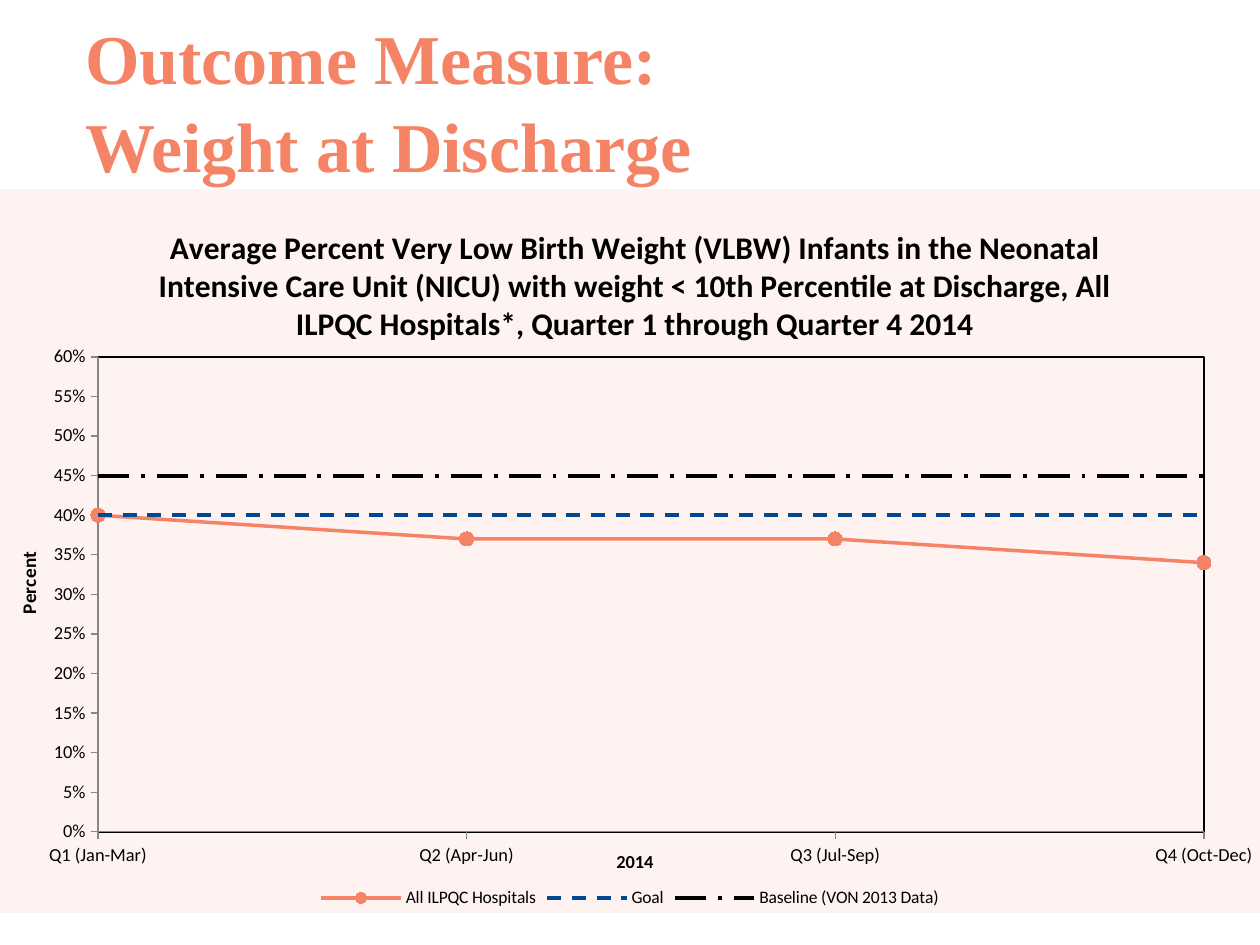
from dataclasses import dataclass

from lxml.etree import SubElement
from pptx import Presentation
from pptx.chart.data import CategoryChartData
from pptx.dml.color import RGBColor
from pptx.enum.chart import XL_CHART_TYPE, XL_LEGEND_POSITION, XL_MARKER_STYLE, XL_TICK_MARK
from pptx.enum.dml import MSO_LINE
from pptx.enum.text import MSO_ANCHOR
from pptx.oxml import parse_xml
from pptx.oxml.ns import nsdecls, qn
from pptx.util import Emu, Pt

EMU_PER_PX = 914400 / 126


@dataclass(frozen=True)
class Theme:
    coral: str = "F58466"
    navy: str = "004990"
    black: str = "000000"
    axis_gray: str = "868686"
    blush: str = "FEF3F0"
    heading_font: str = "Times New Roman"
    chart_font: str = "Calibri"
    heading_size: float = 40
    chart_title_size: float = 18
    percent_size: float = 11
    tick_size: float = 10.5
    legend_size: float = 10


@dataclass(frozen=True)
class Box:
    left: int
    top: int
    width: int
    height: int


@dataclass(frozen=True)
class Measure:
    name: str
    rates: tuple[float, ...]
    color: str
    weight: float
    dash: MSO_LINE = MSO_LINE.SOLID
    marker_size: int = 0


THEME = Theme()
SLIDE = Box(0, 0, 1260, 945)
HEADING = Box(73, 38, 861, 120)
CHART = Box(0, 189, 1260, 724)
PLOT = Box(98, 357, 1106, 475)
QUARTERS = ("Q1 (Jan-Mar)", "Q2 (Apr-Jun)", "Q3 (Jul-Sep)", "Q4 (Oct-Dec)")
MEASURES = (
    Measure("All ILPQC Hospitals", (0.40, 0.37, 0.37, 0.34), THEME.coral, 2, marker_size=8),
    Measure("Goal", (0.40,) * 4, THEME.navy, 2, MSO_LINE.DASH),
    Measure("Baseline (VON 2013 Data)", (0.45,) * 4, THEME.black, 2.25, MSO_LINE.LONG_DASH_DOT),
)
CHART_TITLE = (
    "Average Percent Very Low Birth Weight (VLBW) Infants in the Neonatal "
    "Intensive Care Unit (NICU) with weight < 10th Percentile at Discharge, "
    "All ILPQC Hospitals*, Quarter 1 through Quarter 4 2014"
)


def px(length: int) -> Emu:
    return Emu(round(length * EMU_PER_PX))


def rgb(color: str) -> RGBColor:
    return RGBColor.from_string(color)


def style_font(font, size: float, color: str = THEME.black,
               name: str = THEME.chart_font, bold: bool = False) -> None:
    font.size, font.name, font.bold = Pt(size), name, bold
    font.color.rgb = rgb(color)


def write_text(frame, text: str, *, spacing: float | None = None, **style) -> None:
    paragraph = frame.paragraphs[0]
    paragraph.text = text
    paragraph.line_spacing = spacing
    for run in paragraph.runs:
        style_font(run.font, **style)


def style_line(line, color: str, weight: float, dash: MSO_LINE = MSO_LINE.SOLID) -> None:
    line.color.rgb = rgb(color)
    line.width = Pt(weight)
    line.dash_style = dash


def manual_layout(left: int, top: int, width: int = 0, height: int = 0):
    layout = parse_xml(f"<c:layout {nsdecls('c')}/>")
    manual = SubElement(layout, qn("c:manualLayout"))
    entries = [("xMode", "edge"), ("yMode", "edge"),
               ("x", (left - CHART.left) / CHART.width),
               ("y", (top - CHART.top) / CHART.height)]
    if width:
        entries.insert(0, ("layoutTarget", "inner"))
        entries += [("w", width / CHART.width), ("h", height / CHART.height)]
    for tag, setting in entries:
        SubElement(manual, qn(f"c:{tag}")).set("val", str(setting))
    return layout


def place_title(title_element, left: int, top: int) -> None:
    for layout in title_element.findall(qn("c:layout")):
        title_element.remove(layout)
    title_element.find(qn("c:tx")).addnext(manual_layout(left, top))


def add_heading(slide) -> None:
    heading = slide.shapes.add_textbox(*map(px, (HEADING.left, HEADING.top,
                                                HEADING.width, HEADING.height)))
    frame = heading.text_frame
    frame.word_wrap = True
    frame.vertical_anchor = MSO_ANCHOR.MIDDLE
    write_text(frame, "Outcome Measure:\nWeight at Discharge", spacing=1.05,
               size=THEME.heading_size, color=THEME.coral,
               name=THEME.heading_font, bold=True)


def style_measure(series, measure: Measure) -> None:
    series.smooth = False
    style_line(series.format.line, measure.color, measure.weight, measure.dash)
    marker = series.marker
    if not measure.marker_size:
        marker.style = XL_MARKER_STYLE.NONE
        return
    marker.style, marker.size = XL_MARKER_STYLE.CIRCLE, measure.marker_size
    marker.format.fill.solid()
    marker.format.fill.fore_color.rgb = rgb(measure.color)
    style_line(marker.format.line, measure.color, 0.75)


def style_axis(axis, title: str, title_size: float, left: int, top: int) -> None:
    axis.has_major_gridlines = False
    axis.major_tick_mark = XL_TICK_MARK.OUTSIDE
    axis.minor_tick_mark = XL_TICK_MARK.NONE
    style_font(axis.tick_labels.font, THEME.tick_size)
    style_line(axis.format.line, THEME.axis_gray, 0.75)
    write_text(axis.axis_title.text_frame, title, size=title_size, bold=True)
    place_title(axis.axis_title._element, left, top)


def start_lines_on_axis(axis) -> None:
    axis_element = axis._element
    for crossing in axis_element.findall(qn("c:crossBetween")):
        axis_element.remove(crossing)
    axis_element.find(qn("c:majorUnit")).addprevious(
        parse_xml(f'<c:crossBetween {nsdecls("c")} val="midCat"/>'))


def fill_background(parent, border: str) -> None:
    properties = parse_xml(
        f"<c:spPr {nsdecls('c', 'a')}><a:solidFill><a:srgbClr val=\"{THEME.blush}\"/>"
        f"</a:solidFill><a:ln w=\"9525\">{border}</a:ln></c:spPr>"
    )
    if parent.tag == qn("c:plotArea"):
        parent.append(properties)
    else:
        parent.find(qn("c:chart")).addnext(properties)


def add_rate_chart(slide) -> None:
    rates = CategoryChartData(number_format="0%")
    rates.categories = QUARTERS
    for measure in MEASURES:
        rates.add_series(measure.name, measure.rates)
    chart = slide.shapes.add_chart(
        XL_CHART_TYPE.LINE_MARKERS,
        *map(px, (CHART.left, CHART.top, CHART.width, CHART.height)), rates,
    ).chart
    style_font(chart.font, THEME.legend_size)
    chart.has_title = True
    write_text(chart.chart_title.text_frame, CHART_TITLE,
               size=THEME.chart_title_size, bold=True)
    place_title(chart.chart_title._element, 153, 220)
    chart.plots[0].vary_by_categories = False
    for series, measure in zip(chart.plots[0].series, MEASURES):
        style_measure(series, measure)

    style_axis(chart.category_axis, "2014", THEME.tick_size, 613, 846)
    percent_axis = chart.value_axis
    style_axis(percent_axis, "Percent", THEME.percent_size, 12, 548)
    percent_axis.minimum_scale, percent_axis.maximum_scale = 0, 0.6
    percent_axis.major_unit = 0.05
    percent_axis.tick_labels.number_format = "0%"
    percent_axis.tick_labels.number_format_is_linked = False
    start_lines_on_axis(percent_axis)
    chart.has_legend = True
    chart.legend.position = XL_LEGEND_POSITION.BOTTOM
    chart.legend.include_in_layout = False
    style_font(chart.legend.font, THEME.legend_size)

    chart_space = chart._chartSpace
    plot_area = chart_space.find(f"{qn('c:chart')}/{qn('c:plotArea')}")
    for layout in plot_area.findall(qn("c:layout")):
        plot_area.remove(layout)
    plot_area.insert(0, manual_layout(PLOT.left, PLOT.top, PLOT.width, PLOT.height))
    fill_background(plot_area, f'<a:solidFill><a:srgbClr val="{THEME.black}"/></a:solidFill>')
    fill_background(chart_space, "<a:noFill/>")


def main() -> None:
    presentation = Presentation()
    presentation.slide_width, presentation.slide_height = px(SLIDE.width), px(SLIDE.height)
    add_heading(slide := presentation.slides.add_slide(presentation.slide_layouts[6]))
    add_rate_chart(slide)
    presentation.save("out.pptx")


if __name__ == "__main__":
    main()
